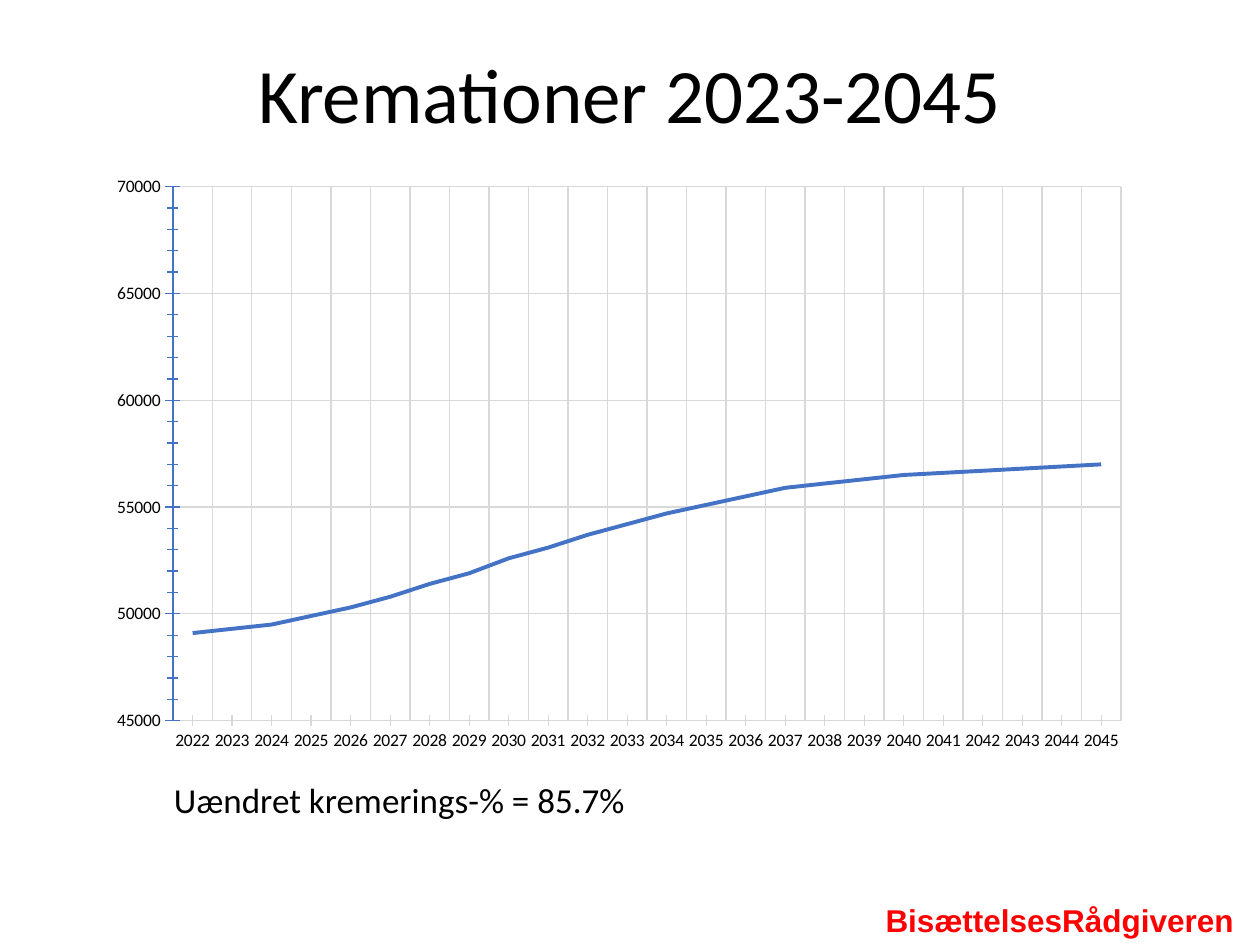
from lxml import etree
from pptx import Presentation
from pptx.chart.data import CategoryChartData
from pptx.dml.color import RGBColor
from pptx.enum.chart import XL_CHART_TYPE, XL_MARKER_STYLE, XL_TICK_MARK
from pptx.enum.text import MSO_ANCHOR, PP_ALIGN
from pptx.oxml.ns import qn
from pptx.util import Inches, Pt

LINE_STACKED = XL_CHART_TYPE.LINE_STACKED
NO_MARKER = XL_MARKER_STYLE.NONE
INSIDE, CROSS = XL_TICK_MARK.INSIDE, XL_TICK_MARK.CROSS
TOP, LEFT, CENTER = MSO_ANCHOR.TOP, PP_ALIGN.LEFT, PP_ALIGN.CENTER

# Content
BLACK, RED, BLUE, GREY = "000000", "FF0000", "4472C4", "D9D9D9"
FIRST_YEAR = 2022
CREMATIONS = [
    49100, 49300, 49500, 49900, 50300, 50800, 51400, 51900,
    52600, 53100, 53700, 54200, 54700, 55100, 55500, 55900,
    56100, 56300, 56500, 56600, 56700, 56800, 56900, 57000,
]
# Text, place (left, top, width, height), alignment, line spacing, font
TEXTS = [
    ("BisættelsesRådgiveren", (6.93, 7.1, 3.07, 0.4), LEFT, 1.0,
     {"name": "Arial", "size": Pt(18), "bold": True}, RED),
    ("Uændret kremerings-% = 85.7%", (1.26, 6.17, 3.82, 0.45), CENTER, 0.9,
     {"name": "Calibri", "size": Pt(20)}, BLACK),
    ("Kremationer 2023-2045", (0.69, 0.4, 8.62, 1.45), CENTER, 0.9,
     {"name": "Calibri", "size": Pt(44)}, BLACK),
]
CHART_PLACE = (0.65, 1.05, 8.7, 5.4)
PLOT_SHARES = {"x": 0.083, "y": 0.08, "w": 0.865, "h": 0.785}
VALUE_AXIS = {"minimum_scale": 45000, "maximum_scale": 70000,
              "major_unit": 5000, "minor_unit": 1000,
              "major_tick_mark": CROSS, "minor_tick_mark": CROSS}
YEAR_AXIS = {"major_tick_mark": INSIDE, "minor_tick_mark": CROSS}


def rgb(value):
    return RGBColor.from_string(value)


def apply(target, values):
    for name, value in values.items():
        setattr(target, name, value)


def style_line(line, color, width):
    line.color.rgb = rgb(color)
    line.width = Pt(width)


def style_font(font, values, color):
    apply(font, values)
    font.color.rgb = rgb(color)


def add_text(slide, text, place, alignment, spacing, font, color):
    frame = slide.shapes.add_textbox(*map(Inches, place)).text_frame
    apply(frame, {"word_wrap": True, "vertical_anchor": TOP})
    paragraph = frame.paragraphs[0]
    apply(paragraph, {"alignment": alignment, "line_spacing": spacing})
    run = paragraph.add_run()
    run.text = text
    style_font(run.font, font, color)


def place_plot(chart):
    plot_area = chart.plots[0]._element.getparent()
    for old in plot_area.findall(qn("c:layout")):
        plot_area.remove(old)
    layout = etree.Element(qn("c:layout"))
    manual = etree.SubElement(layout, qn("c:manualLayout"))
    settings = {"layoutTarget": "inner", "xMode": "edge", "yMode": "edge",
                **PLOT_SHARES}
    for tag, value in settings.items():
        etree.SubElement(manual, qn(f"c:{tag}")).set("val", str(value))
    plot_area.insert(0, layout)


def add_cremation_chart(slide):
    data = CategoryChartData(number_format="0")
    data.categories = [str(FIRST_YEAR + i) for i in range(len(CREMATIONS))]
    data.add_series("Kremationer", CREMATIONS)
    chart = slide.shapes.add_chart(
        LINE_STACKED, *map(Inches, CHART_PLACE), data).chart
    apply(chart, {"has_legend": False, "has_title": False})
    label_font = {"name": "Calibri", "size": Pt(10)}
    style_font(chart.font, label_font, BLACK)
    place_plot(chart)

    # Axes and grid
    for axis, values, color in ((chart.category_axis, YEAR_AXIS, GREY),
                                (chart.value_axis, VALUE_AXIS, BLUE)):
        apply(axis, {"has_major_gridlines": True, **values})
        style_line(axis.format.line, color, 0.75)
        style_line(axis.major_gridlines.format.line, GREY, 0.75)
        style_font(axis.tick_labels.font, label_font, BLACK)
    apply(chart.value_axis.tick_labels,
          {"number_format": "0", "number_format_is_linked": False})

    # Curve
    chart.plots[0].vary_by_categories = False
    curve = chart.plots[0].series[0]
    curve.smooth = False
    curve.marker.style = NO_MARKER
    style_line(curve.format.line, BLUE, 2.25)


def main():
    deck = Presentation()
    apply(deck, {"slide_width": Inches(10), "slide_height": Inches(7.5)})
    slide = deck.slides.add_slide(deck.slide_layouts[6])
    add_cremation_chart(slide)
    for text in TEXTS:
        add_text(slide, *text)
    deck.save("out.pptx")


if __name__ == "__main__":
    main()
